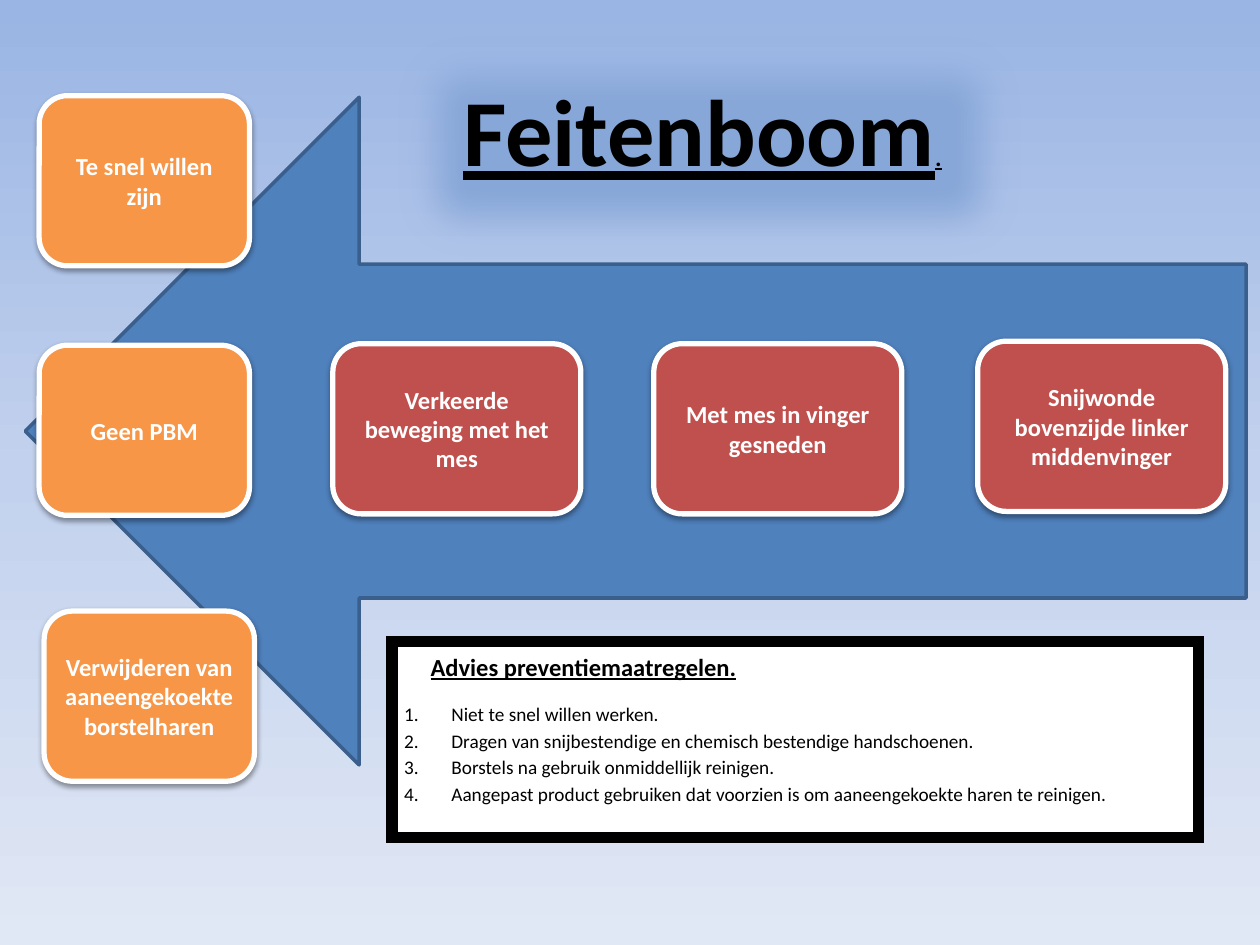
from lxml import etree
from pptx import Presentation
from pptx.dml.color import RGBColor
from pptx.enum.shapes import MSO_SHAPE
from pptx.enum.text import MSO_ANCHOR, PP_ALIGN
from pptx.oxml import parse_xml
from pptx.oxml.ns import qn
from pptx.util import Cm, Pt

ARROW, RECT, ROUND = MSO_SHAPE.RIGHT_ARROW, MSO_SHAPE.RECTANGLE, MSO_SHAPE.ROUNDED_RECTANGLE
TOP, MIDDLE = MSO_ANCHOR.TOP, MSO_ANCHOR.MIDDLE
LEFT, CENTER = PP_ALIGN.LEFT, PP_ALIGN.CENTER

BLACK = RGBColor(0x00, 0x00, 0x00)
WHITE = RGBColor(0xFF, 0xFF, 0xFF)
BLUE = RGBColor(0x4F, 0x81, 0xBD)
NAVY = RGBColor(0x3A, 0x5F, 0x8C)
HAZE = RGBColor(0x87, 0xA7, 0xD8)
RED = RGBColor(0xC0, 0x50, 0x4D)
ORANGE = RGBColor(0xF7, 0x96, 0x46)
SKY = (
    (0, RGBColor(0x9A, 0xB5, 0xE4)),
    (50, RGBColor(0xC2, 0xD1, 0xED)),
    (100, RGBColor(0xE1, 0xE8, 0xF5)),
)

NS = 'xmlns:a="http://schemas.openxmlformats.org/drawingml/2006/main"'
SHADOW = (
    f'<a:outerShdw {NS} blurRad="{Pt(3.1)}" dist="{Pt(1.6)}" dir="5400000" rotWithShape="0">'
    '<a:srgbClr val="000000"><a:alpha val="38000"/></a:srgbClr></a:outerShdw>'
)
SOFT = f'<a:softEdge {NS} rad="{Cm(0.9)}"/>'


class Board:
    font = "Calibri"

    def __init__(self, slide):
        self.slide = slide

    def sky(self, stops):
        """Fill the background with a gradient from top to bottom."""
        fill = self.slide.background.fill
        fill.gradient()
        fill.gradient_angle = 270
        old = self.slide.background._cSld.find(".//" + qn("a:gsLst"))
        marks = "".join(
            f'<a:gs pos="{pos * 1000}"><a:srgbClr val="{color}"/></a:gs>' for pos, color in stops
        )
        old.getparent().replace(old, parse_xml(f"<a:gsLst {NS}>{marks}</a:gsLst>"))

    def shape(self, kind, box, fill, line=None, width=0, effect=None):
        item = self.slide.shapes.add_shape(kind, *map(Cm, box))
        item.shadow.inherit = False
        item.fill.solid()
        item.fill.fore_color.rgb = fill
        if line is None:
            item.line.fill.background()
        else:
            item.line.color.rgb = line
            item.line.width = Pt(width)
        if effect:
            item._element.spPr.find(qn("a:effectLst")).append(parse_xml(effect))
        return item

    def style(self, para, size, color, align, bold=False, under=False):
        para.alignment = align
        font = para.font
        font.name, font.size, font.bold, font.underline = self.font, Pt(size), bold, under
        font.color.rgb = color

    def card(self, text, box, fill):
        item = self.shape(ROUND, box, fill, WHITE, 3, SHADOW)
        frame = item.text_frame
        frame.word_wrap = True
        frame.vertical_anchor = MIDDLE
        frame.text = text
        self.style(frame.paragraphs[0], 14, WHITE, CENTER, bold=True)

    def title(self, text, end, box):
        """Write a large title that closes with a small mark."""
        frame = self.slide.shapes.add_textbox(*map(Cm, box)).text_frame
        frame.word_wrap = False
        frame.vertical_anchor = TOP
        para = frame.paragraphs[0]
        self.style(para, 54, BLACK, CENTER, bold=True, under=True)
        para.add_run().text = text
        run = para.add_run()
        run.text = end
        run.font.size = Pt(14)

    def advice(self, head, items, box):
        """Draw a framed panel with a heading and a numbered list."""
        panel = self.shape(RECT, box, WHITE, BLACK, 6.5)
        etree.SubElement(panel.line._get_or_add_ln(), qn("a:miter"), lim="800000")
        frame = panel.text_frame
        frame.word_wrap = True
        frame.vertical_anchor = TOP
        frame.text = "\n".join([head, *items])
        first, *rest = frame.paragraphs
        self.style(first, 14, BLACK, LEFT, bold=True, under=True)
        first._p.get_or_add_pPr().set("marL", str(Cm(0.53)))
        for para in rest:
            self.style(para, 11, BLACK, LEFT)
            props = para._p.get_or_add_pPr()
            props.set("marL", str(Cm(0.95)))
            props.set("indent", str(Cm(-0.95)))
            number = parse_xml(f'<a:buAutoNum {NS} type="arabicPeriod"/>')
            props.insert_element_before(number, "a:tabLst", "a:defRPr", "a:extLst")
        for para in frame.paragraphs:
            para.line_spacing = 1.15
            para.space_after = Pt(0)
        first.space_after = rest[-1].space_after = Pt(10)


def main():
    deck = Presentation()
    deck.slide_width, deck.slide_height = Cm(25.4), Cm(19.05)
    board = Board(deck.slides.add_slide(deck.slide_layouts[6]))
    board.sky(SKY)

    arrow = board.shape(ARROW, (0.51, 1.96, 24.61, 13.46), BLUE, NAVY, 2)
    arrow.rotation = 180
    board.shape(RECT, (7.7, 0.4, 13.2, 5.1), HAZE, effect=SOFT)
    board.title("Feitenboom", ".", (9.04, 1.32, 10.24, 3.33))
    board.advice(
        "Advies preventiemaatregelen.",
        (
            "Niet te snel willen werken.",
            "Dragen van snijbestendige en chemisch bestendige handschoenen.",
            "Borstels na gebruik onmiddellijk reinigen.",
            "Aangepast product gebruiken dat voorzien is om aaneengekoekte haren te reinigen.",
        ),
        (7.9, 12.93, 16.26, 3.96),
    )

    high = 3.43
    for text, left, top, wide, fill in (
        ("Snijwonde bovenzijde linker middenvinger", 19.71, 6.88, 5, RED),
        ("Met mes in vinger gesneden", 13.18, 6.93, 5, RED),
        ("Verkeerde beweging met het mes", 6.71, 6.93, 5, RED),
        ("Te snel willen zijn", 0.79, 1.93, 4.24, ORANGE),
        ("Verwijderen van aaneengekoekte borstelharen", 0.89, 12.32, 4.24, ORANGE),
        ("Geen PBM", 0.79, 6.96, 4.24, ORANGE),
    ):
        board.card(text, (left, top, wide, high), fill)
    deck.save("out.pptx")


if __name__ == "__main__":
    main()
